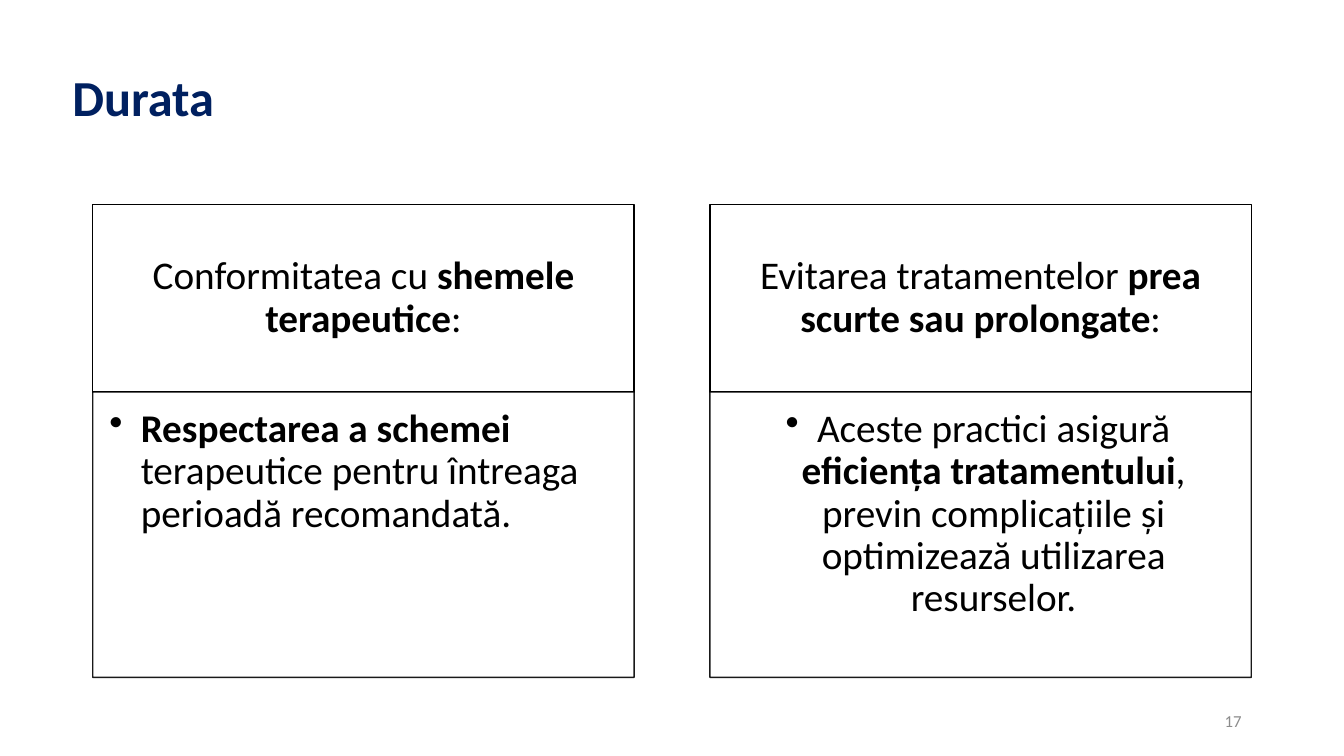
from dataclasses import dataclass

from lxml import etree
from pptx import Presentation
from pptx.dml.color import RGBColor
from pptx.enum.shapes import MSO_SHAPE
from pptx.enum.text import MSO_ANCHOR, PP_ALIGN
from pptx.oxml.ns import qn
from pptx.util import Pt

RECTANGLE = MSO_SHAPE.RECTANGLE
TOP, MIDDLE = MSO_ANCHOR.TOP, MSO_ANCHOR.MIDDLE
LEFT, CENTER, RIGHT = PP_ALIGN.LEFT, PP_ALIGN.CENTER, PP_ALIGN.RIGHT


@dataclass(frozen=True)
class Theme:
    font: str = "Calibri"
    title_color: RGBColor = RGBColor(0x00, 0x20, 0x60)
    text_color: RGBColor = RGBColor(0x00, 0x00, 0x00)
    number_color: RGBColor = RGBColor(0x8C, 0x8C, 0x8C)
    box_fill: RGBColor = RGBColor(0xFF, 0xFF, 0xFF)
    box_line: RGBColor = RGBColor(0x00, 0x00, 0x00)
    title_size: float = 36
    text_size: float = 28
    number_size: float = 12


class SlideBuilder:
    def __init__(self, slide, theme):
        self.slide = slide
        self.theme = theme

    def add_runs(self, shape, runs, size, color, align, anchor, insets, spacing=0.9, bullet_indent=0):
        """Fill the shape with one paragraph made of (text, bold) runs."""
        frame = shape.text_frame
        frame.word_wrap = True
        frame.vertical_anchor = anchor
        frame.margin_left, frame.margin_top, frame.margin_right, frame.margin_bottom = map(Pt, insets)
        paragraph = frame.paragraphs[0]
        paragraph.alignment = align
        paragraph.line_spacing = spacing
        if bullet_indent:
            properties = paragraph._p.get_or_add_pPr()
            properties.set("marL", str(Pt(bullet_indent)))
            properties.set("indent", str(-Pt(bullet_indent)))
            etree.SubElement(properties, qn("a:buChar"), char="•")
        for text, bold in runs:
            run = paragraph.add_run()
            run.text = text
            run.font.name = self.theme.font
            run.font.size = Pt(size)
            run.font.bold = bold
            run.font.color.rgb = color

    def text(self, bounds, runs, size, color, align, spacing):
        shape = self.slide.shapes.add_textbox(*map(Pt, bounds))
        self.add_runs(shape, runs, size, color, align, MIDDLE, (7.2, 3.6, 7.2, 3.6), spacing)

    def box(self, bounds, opacity=100):
        shape = self.slide.shapes.add_shape(RECTANGLE, *map(Pt, bounds))
        shape.shadow.inherit = False
        shape.fill.solid()
        shape.fill.fore_color.rgb = self.theme.box_fill
        shape.line.color.rgb = self.theme.box_line
        shape.line.width = Pt(1)
        if opacity < 100:
            for color in shape._element.spPr.iter(qn("a:srgbClr")):
                etree.SubElement(color, qn("a:alpha"), val=str(opacity * 1000))
        return shape

    def header(self, bounds, runs):
        self.add_runs(self.box(bounds), runs, self.theme.text_size, self.theme.text_color,
                      CENTER, MIDDLE, (15.68, 8.96, 15.68, 8.96))

    def body(self, bounds, runs, align):
        self.add_runs(self.box(bounds, opacity=90), runs, self.theme.text_size, self.theme.text_color,
                      align, TOP, (11.76, 11.76, 15.68, 17.64), bullet_indent=22.5)


COLUMNS = [
    (
        [("Conformitatea cu ", False), ("shemele terapeutice", True), (":", False)],
        [("Respectarea a schemei ", True),
         ("terapeutice pentru întreaga perioadă recomandată.", False)],
        LEFT,
    ),
    (
        [("Evitarea tratamentelor ", False), ("prea scurte sau prolongate", True), (":", False)],
        [("Aceste practici asigură ", False), ("eficiența tratamentului", True),
         (", previn complicațiile și optimizează utilizarea resurselor.", False)],
        CENTER,
    ),
]
COLUMN_LEFT, COLUMN_WIDTH, COLUMN_PITCH = 66.3, 386.7, 440.8
HEADER_TOP, HEADER_HEIGHT, BODY_HEIGHT = 146.1, 133.9, 203.9


def main():
    presentation = Presentation()
    presentation.slide_width, presentation.slide_height = Pt(960), Pt(540)
    theme = Theme()
    builder = SlideBuilder(presentation.slides.add_slide(presentation.slide_layouts[6]), theme)

    builder.text((44.6, 19.4, 828, 104.4), [("Durata", True)],
                 theme.title_size, theme.title_color, LEFT, 0.9)
    for index, (header_runs, body_runs, body_align) in enumerate(COLUMNS):
        left = COLUMN_LEFT + index * COLUMN_PITCH
        builder.header((left, HEADER_TOP, COLUMN_WIDTH, HEADER_HEIGHT), header_runs)
        builder.body((left, HEADER_TOP + HEADER_HEIGHT, COLUMN_WIDTH, BODY_HEIGHT),
                     body_runs, body_align)
    builder.text((678, 500.5, 216, 28.8), [("17", False)],
                 theme.number_size, theme.number_color, RIGHT, 1.0)

    presentation.save("out.pptx")


if __name__ == "__main__":
    main()
